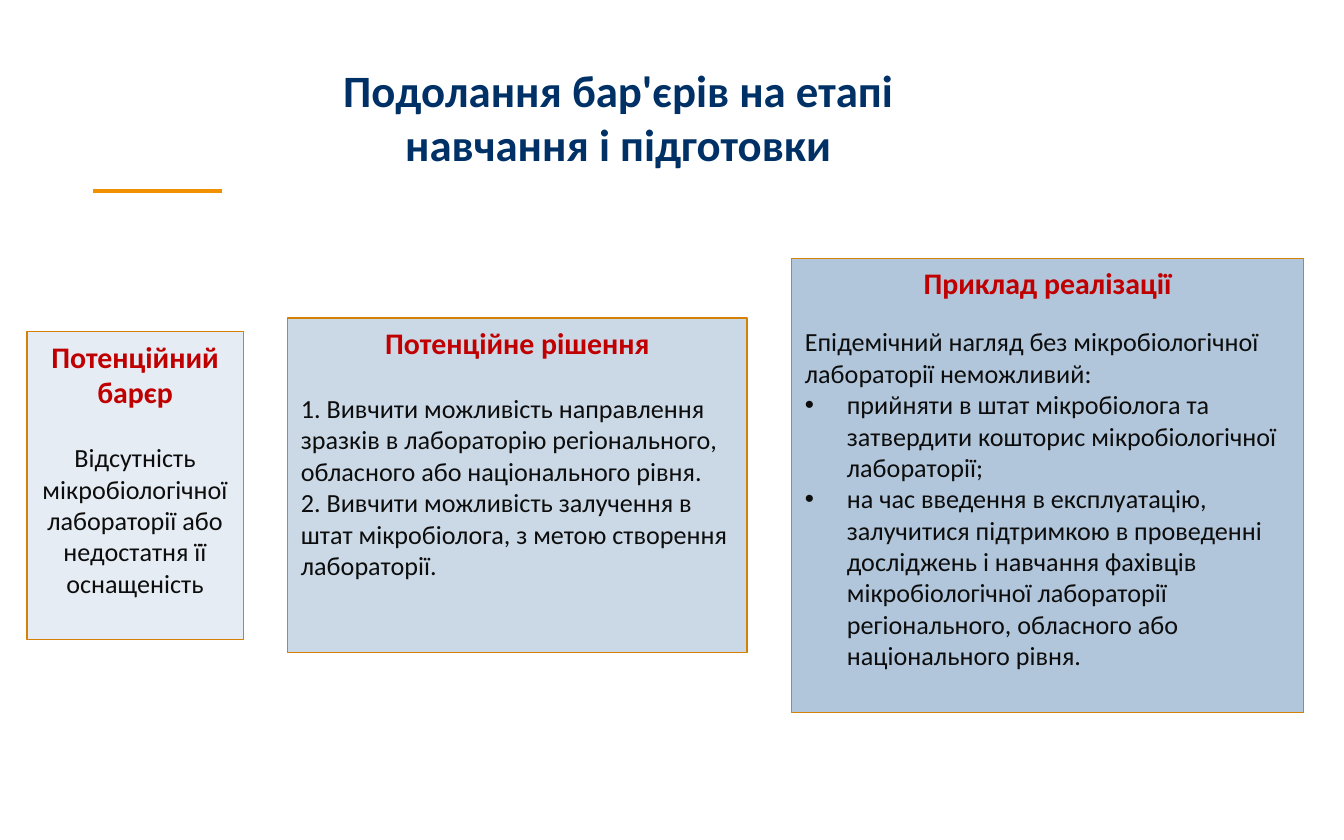
from lxml.etree import SubElement
from pptx import Presentation
from pptx.dml.color import RGBColor
from pptx.enum.shapes import MSO_CONNECTOR, MSO_SHAPE
from pptx.enum.text import MSO_ANCHOR, MSO_AUTO_SIZE, PP_ALIGN
from pptx.oxml.ns import qn
from pptx.util import Pt

FONT = "Calibri"
NAVY = RGBColor(0x00, 0x31, 0x66)
ORANGE = RGBColor(0xF2, 0x91, 0x00)
BORDER = RGBColor(0xD4, 0x81, 0x05)
RED = RGBColor(0xC0, 0x00, 0x00)
TEXT = RGBColor(0x0D, 0x0D, 0x0D)
BARRIER_FILL = RGBColor(0xE5, 0xEC, 0xF3)
SOLUTION_FILL = RGBColor(0xCB, 0xD9, 0xE7)
EXAMPLE_FILL = RGBColor(0xB1, 0xC6, 0xDB)

PANEL_LEFT = 14.4
PANEL_GAP = 23.8
PANEL_MIDDLE = 260.1
BULLET_INDENT = 22.5
BULLET = "• "

TITLE = "Подолання бар'єрів на етапі\nнавчання і підготовки"

# Width, height, fill, heading, space below heading, body alignment, body paragraphs
PANELS = [
    (115.9, 164.9, BARRIER_FILL, "Потенційний барєр", 17, PP_ALIGN.CENTER, [
        "Відсутність мікробіологічної лабораторії або недостатня її оснащеність",
    ]),
    (246.2, 179.3, SOLUTION_FILL, "Потенційне рішення", 17, PP_ALIGN.LEFT, [
        "1. Вивчити можливість направлення зразків в лабораторію регіонального, "
        "обласного або національного рівня.",
        "2. Вивчити можливість залучення в штат мікробіолога, з метою створення "
        "лабораторії.",
    ]),
    (274.3, 243.4, EXAMPLE_FILL, "Приклад реалізації", 13.4, PP_ALIGN.LEFT, [
        "Епідемічний нагляд без мікробіологічної лабораторії неможливий:",
        BULLET + "прийняти в штат мікробіолога та затвердити кошторис "
        "мікробіологічної лабораторії;",
        BULLET + "на час введення в експлуатацію, залучитися підтримкою в проведенні "
        "досліджень і навчання фахівців мікробіологічної лабораторії "
        "регіонального, обласного або національного рівня.",
    ]),
]


def format_paragraph(paragraph, size, color, bold, alignment):
    paragraph.alignment = alignment
    for run in paragraph.runs:
        run.font.name = FONT
        run.font.size = Pt(size)
        run.font.bold = bold
        run.font.color.rgb = color


def add_bullet(paragraph):
    properties = paragraph._p.get_or_add_pPr()
    properties.set("marL", str(Pt(BULLET_INDENT)))
    properties.set("indent", str(-Pt(BULLET_INDENT)))
    SubElement(properties, qn("a:buFont")).set("typeface", "Arial")
    SubElement(properties, qn("a:buChar")).set("char", BULLET.strip())


def set_title(slide):
    title = slide.shapes.title
    title.left, title.top, title.width, title.height = Pt(72), Pt(29.5), Pt(518.4), Pt(65.5)
    text_frame = title.text_frame
    text_frame.text = TITLE
    text_frame.auto_size = MSO_AUTO_SIZE.NONE
    text_frame.vertical_anchor = MSO_ANCHOR.MIDDLE
    for paragraph in text_frame.paragraphs:
        format_paragraph(paragraph, 24, NAVY, True, PP_ALIGN.CENTER)


def add_accent_line(slide):
    line = slide.shapes.add_connector(
        MSO_CONNECTOR.STRAIGHT, Pt(49.7), Pt(102.2), Pt(118.8), Pt(102.2))
    line.line.color.rgb = ORANGE
    line.line.width = Pt(2)
    SubElement(line._element.spPr, qn("a:effectLst"))


def add_panel(slide, left, width, height, fill, heading, heading_space, alignment, body):
    """Add a box centred on the common middle line, with a heading over its body text."""
    panel = slide.shapes.add_shape(
        MSO_SHAPE.RECTANGLE, Pt(left), Pt(PANEL_MIDDLE - height / 2), Pt(width), Pt(height))
    panel.shadow.inherit = False
    panel.fill.solid()
    panel.fill.fore_color.rgb = fill
    panel.line.color.rgb = BORDER
    panel.line.width = Pt(0.75)

    text_frame = panel.text_frame
    text_frame.word_wrap = True
    text_frame.vertical_anchor = MSO_ANCHOR.TOP
    text_frame.text = heading
    heading_paragraph = text_frame.paragraphs[0]
    heading_paragraph.space_after = Pt(heading_space)
    format_paragraph(heading_paragraph, 16, RED, True, PP_ALIGN.CENTER)
    for text in body:
        paragraph = text_frame.add_paragraph()
        paragraph.text = text.removeprefix(BULLET)
        if text.startswith(BULLET):
            add_bullet(paragraph)
        format_paragraph(paragraph, 14, TEXT, False, alignment)


def main():
    presentation = Presentation()
    presentation.slide_width, presentation.slide_height = Pt(720), Pt(450)
    slide = presentation.slides.add_slide(presentation.slide_layouts.get_by_name("Title Only"))
    add_accent_line(slide)
    set_title(slide)
    left = PANEL_LEFT
    for width, *details in PANELS:
        add_panel(slide, left, width, *details)
        left += width + PANEL_GAP
    presentation.save("out.pptx")


if __name__ == "__main__":
    main()
